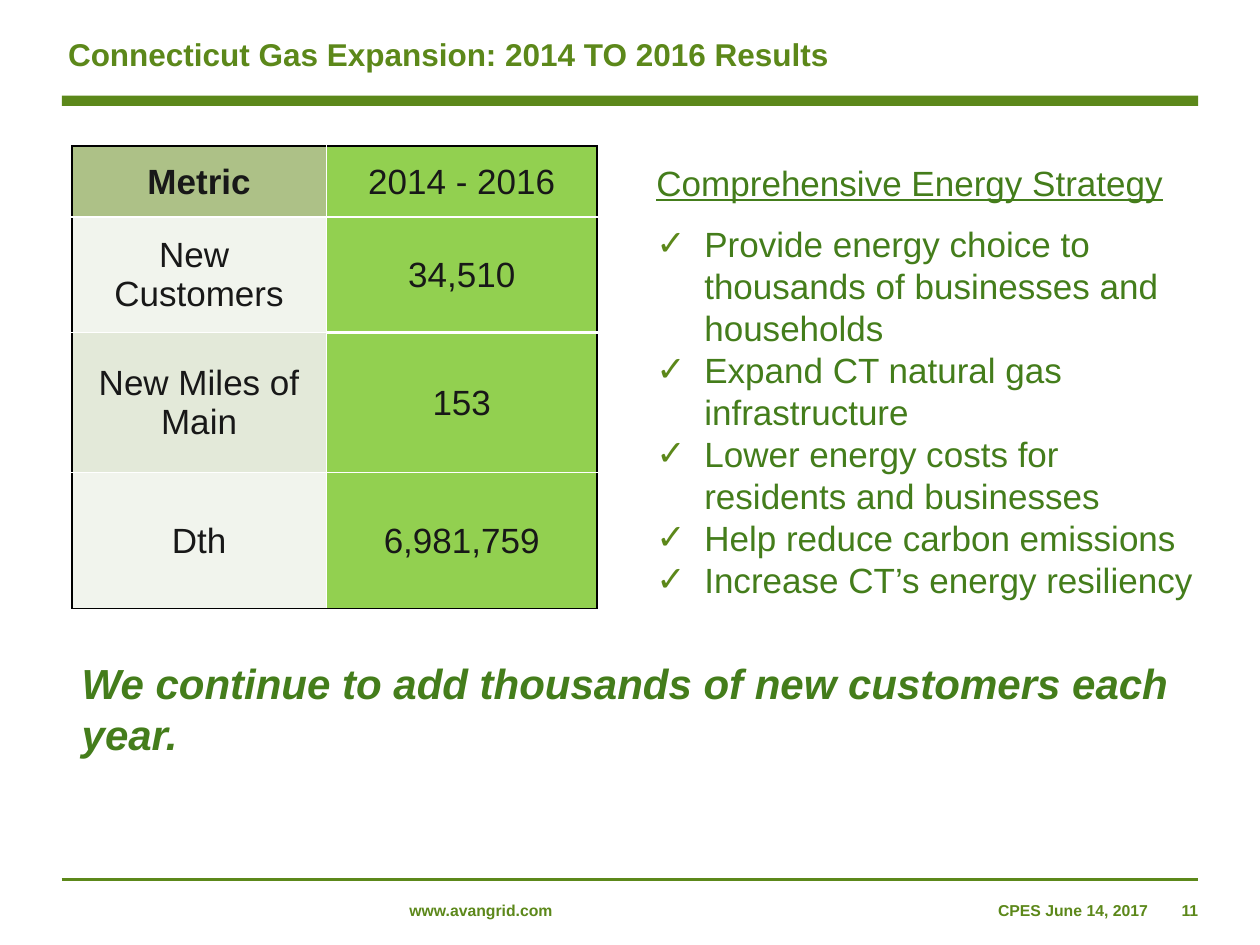
from pptx import Presentation
from pptx.dml.color import RGBColor
from pptx.enum.shapes import MSO_CONNECTOR as Link, MSO_SHAPE as Shape
from pptx.enum.text import MSO_ANCHOR as Anchor, MSO_AUTO_SIZE as Auto, PP_ALIGN as Align
from pptx.oxml.ns import qn
from pptx.util import Inches, Pt
from lxml.etree import SubElement

LEAF, MOSS, INK = "5C881A", "447D1B", "181818"
LIME, SAGE, PALE, MIST = "92D050", "ADC187", "F1F4ED", "E3E9D9"
BLACK, WHITE = "000000", "FFFFFF"
EDGE, WIDTH = 0.49, 9.02

ROWS = [
    ("Metric", "2014 - 2016"),
    ("New \nCustomers", "34,510"),
    ("New Miles of Main", "153"),
    ("Dth", "6,981,759"),
]
COLS, HIGH = (2.02, 2.15), (0.56, 0.92, 1.11, 1.08)
TINTS = (SAGE, PALE, MIST, PALE)
HEAVY = {(1, 0), (1, 1), (2, 1)}

GOALS = [
    "Provide energy choice to thousands of businesses and households",
    "Expand CT natural gas infrastructure",
    "Lower energy costs for residents and businesses",
    "Help reduce carbon emissions",
    "Increase CT’s energy resiliency",
]


def tint(code):
    """Turn a hex string into a colour."""
    return RGBColor.from_string(code)


def assign(item, values):
    """Set each named value on an item."""
    for key, value in values.items():
        setattr(item, key, value)


class Deck:
    """Hold the style and the current slide."""

    def __init__(self):
        """Open a new deck with one slide."""
        self.file = Presentation()
        assign(self.file, {"slide_width": Inches(10), "slide_height": Inches(7.5)})
        self.slide = self.file.slides.add_slide(self.file.slide_layouts[1])
        self.shapes = self.slide.shapes
        self.face = "Arial"

    def place(self, shape, spot):
        """Move a shape to its spot."""
        names = ("left", "top", "width", "height")
        assign(shape, {name: Inches(size) for name, size in zip(names, spot)})

    def frame(self, frame, pads, anchor=Anchor.TOP):
        """Set the insets and anchor of a text frame."""
        sides = ("margin_left", "margin_top", "margin_right", "margin_bottom")
        assign(frame, {side: Inches(pad) for side, pad in zip(sides, pads)})
        assign(frame, {"word_wrap": True, "auto_size": Auto.NONE,
                       "vertical_anchor": anchor})

    def words(self, para, text, size, color, lead=None, align=Align.LEFT, before=0, **font):
        """Fill one paragraph with styled text."""
        assign(para, {"alignment": align, "space_before": Pt(before),
                      "space_after": Pt(0)})
        if lead:
            para.line_spacing = Pt(lead)
        run = para.add_run()
        run.text = text
        assign(run.font, {"name": self.face, "size": Pt(size), "bold": False, **font})
        run.font.color.rgb = tint(color)

    def title(self, text, spot):
        """Fill the title placeholder."""
        shape = self.shapes.title
        self.place(shape, spot)
        self.frame(shape.text_frame, (0, 0.05, 0.09, 0.05), Anchor.MIDDLE)
        self.words(shape.text_frame.paragraphs[0], text, 18, LEAF, 18.9, bold=True)

    def bullet(self, para, mark=None):
        """Give a paragraph a check mark or no bullet."""
        props = para._p.get_or_add_pPr()
        hang = Inches(0.38) if mark else 0
        props.set("marL", str(hang))
        props.set("indent", str(-hang))
        if not mark:
            SubElement(props, qn("a:buNone"))
            return
        color = SubElement(props, qn("a:buClr"))
        SubElement(color, qn("a:srgbClr"), val=LEAF)
        SubElement(props, qn("a:buFont"), typeface=self.face)
        SubElement(props, qn("a:buChar"), char=mark)

    def goals(self, head, items, spot):
        """Fill the body placeholder with a heading and a list."""
        shape = self.slide.placeholders[1]
        self.place(shape, spot)
        frame = shape.text_frame
        self.frame(frame, (0.1, 0.05, 0.1, 0.05))
        para = frame.paragraphs[0]
        self.bullet(para)
        self.words(para, head, 20, MOSS, 24, underline=True)
        for row, item in enumerate(items):
            para = frame.add_paragraph()
            self.bullet(para, "✓")
            self.words(para, item, 20, MOSS, 24, before=0 if row else 11)

    def text(self, text, spot, size, color, pads=(0, 0, 0, 0), **style):
        """Add a text box."""
        frame = self.shapes.add_textbox(*map(Inches, spot)).text_frame
        self.frame(frame, pads)
        self.words(frame.paragraphs[0], text, size, color, bold=True, **style)

    def bar(self, spot):
        """Add a solid bar."""
        shape = self.shapes.add_shape(Shape.RECTANGLE, *map(Inches, spot))
        shape.shadow.inherit = False
        shape.fill.solid()
        shape.fill.fore_color.rgb = tint(LEAF)
        shape.line.fill.background()

    def rule(self, left, top, width):
        """Add a level line."""
        ends = map(Inches, (left, top, left + width, top))
        line = self.shapes.add_connector(Link.STRAIGHT, *ends)
        line.line.color.rgb = tint(LEAF)
        line.line.width = Pt(2)
        SubElement(line._element.spPr, qn("a:effectLst"))

    def border(self, cell, side, outer, heavy):
        """Draw one border of a cell."""
        wide = Pt(1.5 if heavy else 1)
        line = SubElement(cell._tc.get_or_add_tcPr(), qn(f"a:ln{side}"), w=str(wide))
        fill = SubElement(line, qn("a:solidFill"))
        SubElement(fill, qn("a:srgbClr"), val=BLACK if outer else WHITE)

    def cell(self, cell, row, col, text):
        """Style and fill one table cell."""
        last, end = len(ROWS) - 1, len(COLS) - 1
        self.border(cell, "L", col == 0, False)
        self.border(cell, "R", col == end, False)
        self.border(cell, "T", row == 0, (row, col) in HEAVY)
        self.border(cell, "B", row == last, (row + 1, col) in HEAVY)
        cell.fill.solid()
        cell.fill.fore_color.rgb = tint(LIME if col else TINTS[row])
        thin = Inches(0.01)
        assign(cell, {"margin_left": thin, "margin_right": thin, "margin_top": thin,
                      "margin_bottom": 0, "vertical_anchor": Anchor.MIDDLE})
        frame = cell.text_frame
        for count, part in enumerate(text.split("\n")):
            para = frame.add_paragraph() if count else frame.paragraphs[0]
            self.words(para, part, 20, INK, 22.3, Align.CENTER, bold=row == col == 0)

    def table(self, left, top):
        """Add the table of results."""
        size = map(Inches, (left, top, sum(COLS), sum(HIGH)))
        grid = self.shapes.add_table(len(ROWS), len(COLS), *size).table
        assign(grid, {"first_row": False, "horz_banding": False})
        for col, width in zip(grid.columns, COLS):
            col.width = Inches(width)
        for row, (line, high) in enumerate(zip(ROWS, HIGH)):
            grid.rows[row].height = Inches(high)
            for col, text in enumerate(line):
                self.cell(grid.cell(row, col), row, col, text)


def main():
    """Build the slide and save it."""
    deck = Deck()
    deck.title("Connecticut Gas Expansion: 2014 TO 2016 Results", (0.54, 0.13, 9.01, 0.63))
    deck.bar((EDGE, 0.76, WIDTH, 0.08))
    deck.table(0.57, 1.16)
    deck.goals("Comprehensive Energy Strategy", GOALS, (5.11, 1.23, 4.54, 3.62))
    deck.text("We continue to add thousands of new customers each year.",
              (0.55, 5.17, 9.12, 0.91), 24, MOSS, (0.1, 0.05, 0.1, 0.05),
              lead=28.8, italic=True)
    deck.rule(EDGE, 6.98, WIDTH)
    for text, left, width, align in (
        ("www.avangrid.com", 3.25, 1.97, Align.LEFT),
        ("CPES June 14, 2017", 7.11, 2, Align.RIGHT),
        ("11", 9.2, 0.31, Align.RIGHT),
    ):
        deck.text(text, (left, 7.15, width, 0.15), 9, LEAF, align=align)
    deck.file.save("out.pptx")


if __name__ == "__main__":
    main()
